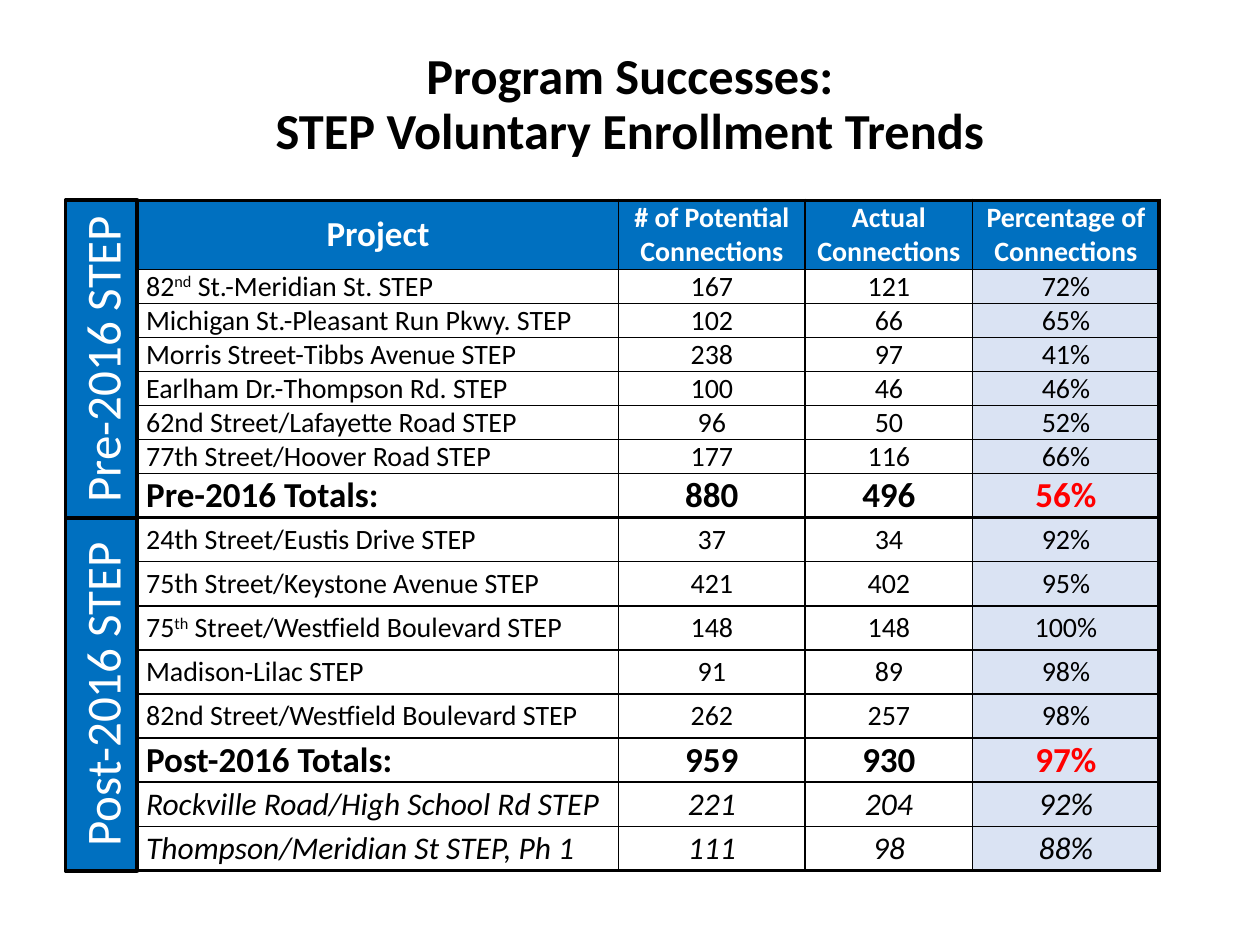
from dataclasses import dataclass
from typing import Any

from lxml.etree import SubElement
from pptx import Presentation
from pptx.dml.color import RGBColor
from pptx.enum.shapes import MSO_SHAPE as Shape
from pptx.enum.text import MSO_ANCHOR as Anchor, MSO_AUTO_SIZE as AutoSize, PP_ALIGN as Align
from pptx.oxml import parse_xml
from pptx.oxml.ns import nsdecls, qn
from pptx.util import Inches, Pt

BLACK = RGBColor(0x00, 0x00, 0x00)
WHITE = RGBColor(0xFF, 0xFF, 0xFF)
RED = RGBColor(0xFF, 0x00, 0x00)
BLUE = RGBColor(0x00, 0x70, 0xC0)
PALE_BLUE = RGBColor(0xDA, 0xE3, 0xF3)

FONT = "Calibri"
THIN, THICK = 1, 2.25
TABLE_LEFT, TABLE_TOP = 1.09, 1.59
COLUMN_WIDTHS = [3.82, 1.48, 1.33, 1.48]
ROW_HEIGHTS = [0.55] + [0.27] * 6 + [0.35] * 9
PRE_TOTAL_ROW = 7
LAST_ROW = len(ROW_HEIGHTS) - 1
LAST_COLUMN = len(COLUMN_WIDTHS) - 1
BAR_WIDTH = 0.57

HEADER = {"size": Pt(16), "bold": True, "italic": False}
PLAIN = {"size": Pt(16), "bold": False, "italic": False}
TOTAL = {"size": Pt(20), "bold": True, "italic": False}
ONGOING = {"size": Pt(18), "bold": False, "italic": True}


@dataclass
class Row:
    project: str
    potential: str
    actual: str
    percentage: str
    style: dict
    ordinal: str = ""

    def texts(self) -> list[str]:
        return [self.project, self.potential, self.actual, self.percentage]


@dataclass
class Bar:
    text: str
    first_row: int
    last_row: int


ROWS = [
    Row("Project", "# of Potential Connections", "Actual Connections",
        "Percentage of Connections", HEADER),
    Row("82nd St.-Meridian St. STEP", "167", "121", "72%", PLAIN, "nd"),
    Row("Michigan St.-Pleasant Run Pkwy. STEP", "102", "66", "65%", PLAIN),
    Row("Morris Street-Tibbs Avenue STEP", "238", "97", "41%", PLAIN),
    Row("Earlham Dr.-Thompson Rd. STEP", "100", "46", "46%", PLAIN),
    Row("62nd Street/Lafayette Road STEP", "96", "50", "52%", PLAIN),
    Row("77th Street/Hoover Road STEP", "177", "116", "66%", PLAIN),
    Row("Pre-2016 Totals:", "880", "496", "56%", TOTAL),
    Row("24th Street/Eustis Drive STEP", "37", "34", "92%", PLAIN),
    Row("75th Street/Keystone Avenue STEP", "421", "402", "95%", PLAIN),
    Row("75th Street/Westfield Boulevard STEP", "148", "148", "100%", PLAIN, "th"),
    Row("Madison-Lilac STEP", "91", "89", "98%", PLAIN),
    Row("82nd Street/Westfield Boulevard STEP", "262", "257", "98%", PLAIN),
    Row("Post-2016 Totals:", "959", "930", "97%", TOTAL),
    Row("Rockville Road/High School Rd STEP", "221", "204", "92%", ONGOING),
    Row("Thompson/Meridian St STEP, Ph 1", "111", "98", "88%", ONGOING),
]
BARS = [
    Bar("Pre-2016 STEP", 0, PRE_TOTAL_ROW),
    Bar("Post-2016 STEP", PRE_TOTAL_ROW + 1, LAST_ROW),
]


def apply(target: Any, values: dict) -> None:
    for name, value in values.items():
        setattr(target, name, value)


def add_run(paragraph: Any, text: str, style: dict, color: RGBColor) -> Any:
    run = paragraph.add_run()
    run.text = text
    apply(run.font, {"name": FONT, **style})
    run.font.color.rgb = color
    return run


def add_title(slide: Any) -> None:
    title = slide.shapes.title
    apply(title, {"left": Inches(0.69), "top": Inches(0.4),
                  "width": Inches(8.62), "height": Inches(0.88)})
    frame = title.text_frame
    apply(frame, {"auto_size": AutoSize.NONE, "word_wrap": True,
                  "vertical_anchor": Anchor.MIDDLE})
    frame.text = "Program Successes:\vSTEP Voluntary Enrollment Trends"
    paragraph = frame.paragraphs[0]
    apply(paragraph, {"alignment": Align.CENTER, "line_spacing": 0.9})
    for run in paragraph.runs:
        apply(run.font, {"name": FONT, "size": Pt(28.8), "bold": True})
        run.font.color.rgb = BLACK


def add_bar(slide: Any, bar: Bar) -> None:
    length = sum(ROW_HEIGHTS[bar.first_row:bar.last_row + 1])
    center_x = TABLE_LEFT - BAR_WIDTH / 2
    center_y = TABLE_TOP + sum(ROW_HEIGHTS[:bar.first_row]) + length / 2
    shape = slide.shapes.add_shape(
        Shape.RECTANGLE, Inches(center_x - length / 2),
        Inches(center_y - BAR_WIDTH / 2), Inches(length), Inches(BAR_WIDTH))
    shape.rotation = 270
    shape.shadow.inherit = False
    shape.fill.solid()
    shape.fill.fore_color.rgb = BLUE
    shape.line.color.rgb = BLACK
    shape.line.width = Pt(THICK)
    frame = shape.text_frame
    apply(frame, {"word_wrap": True, "auto_size": AutoSize.SHAPE_TO_FIT_TEXT,
                  "vertical_anchor": Anchor.TOP})
    paragraph = frame.paragraphs[0]
    paragraph.alignment = Align.CENTER
    add_run(paragraph, bar.text, {"size": Pt(28)}, WHITE)


def set_borders(cell: Any, row: int, column: int) -> None:
    thick_edges = {
        "lnL": column == 0,
        "lnR": column == LAST_COLUMN,
        "lnT": row in (0, PRE_TOTAL_ROW + 1),
        "lnB": row in (PRE_TOTAL_ROW, LAST_ROW),
    }
    properties = cell._tc.get_or_add_tcPr()
    for index, (tag, thick) in enumerate(thick_edges.items()):
        width = Pt(THICK if thick else THIN)
        properties.insert(index, parse_xml(
            f'<a:{tag} {nsdecls("a")} w="{width}"><a:solidFill>'
            f'<a:srgbClr val="{BLACK}"/></a:solidFill></a:{tag}>'))


def add_tab_stop(paragraph: Any) -> None:
    tabs = SubElement(paragraph._p.get_or_add_pPr(), qn("a:tabLst"))
    SubElement(tabs, qn("a:tab"), pos=str(Inches(0.64)), algn="l")


def fill_cell(cell: Any, row: int, column: int) -> None:
    record = ROWS[row]
    text = record.texts()[column]
    is_header, is_project = row == 0, column == 0
    apply(cell, {"vertical_anchor": Anchor.MIDDLE,
                 "margin_left": Inches(0.07), "margin_right": Inches(0.07),
                 "margin_top": 0, "margin_bottom": 0})
    if is_header or column == LAST_COLUMN:
        cell.fill.solid()
        cell.fill.fore_color.rgb = BLUE if is_header else PALE_BLUE
    else:
        cell.fill.background()
    set_borders(cell, row, column)

    paragraph = cell.text_frame.paragraphs[0]
    if is_header or is_project:
        add_tab_stop(paragraph)
    paragraph.alignment = Align.LEFT if is_project and not is_header else Align.CENTER
    style = TOTAL if is_header and is_project else record.style
    color = WHITE if is_header else BLACK
    if record.style is TOTAL and column == LAST_COLUMN:
        color = RED
    if is_project and record.ordinal:
        number, ordinal, rest = text.partition(record.ordinal)
        add_run(paragraph, number, style, color)
        raised = add_run(paragraph, ordinal, style, color)
        raised._r.get_or_add_rPr().set("baseline", "30000")
        add_run(paragraph, rest, style, color)
    else:
        add_run(paragraph, text, style, color)


def add_enrollment_table(slide: Any) -> None:
    table = slide.shapes.add_table(
        len(ROW_HEIGHTS), len(COLUMN_WIDTHS), Inches(TABLE_LEFT), Inches(TABLE_TOP),
        Inches(sum(COLUMN_WIDTHS)), Inches(sum(ROW_HEIGHTS))).table
    apply(table, {"first_row": False, "horz_banding": False})
    for column, width in zip(table.columns, COLUMN_WIDTHS):
        column.width = Inches(width)
    for row, height in enumerate(ROW_HEIGHTS):
        table.rows[row].height = Inches(height)
        for column in range(len(COLUMN_WIDTHS)):
            fill_cell(table.cell(row, column), row, column)


def main() -> None:
    presentation = Presentation()
    apply(presentation, {"slide_width": Inches(10), "slide_height": Inches(7.5)})
    slide = presentation.slides.add_slide(presentation.slide_layouts[5])
    add_title(slide)
    for bar in BARS:
        add_bar(slide, bar)
    add_enrollment_table(slide)
    presentation.save("out.pptx")


if __name__ == "__main__":
    main()
